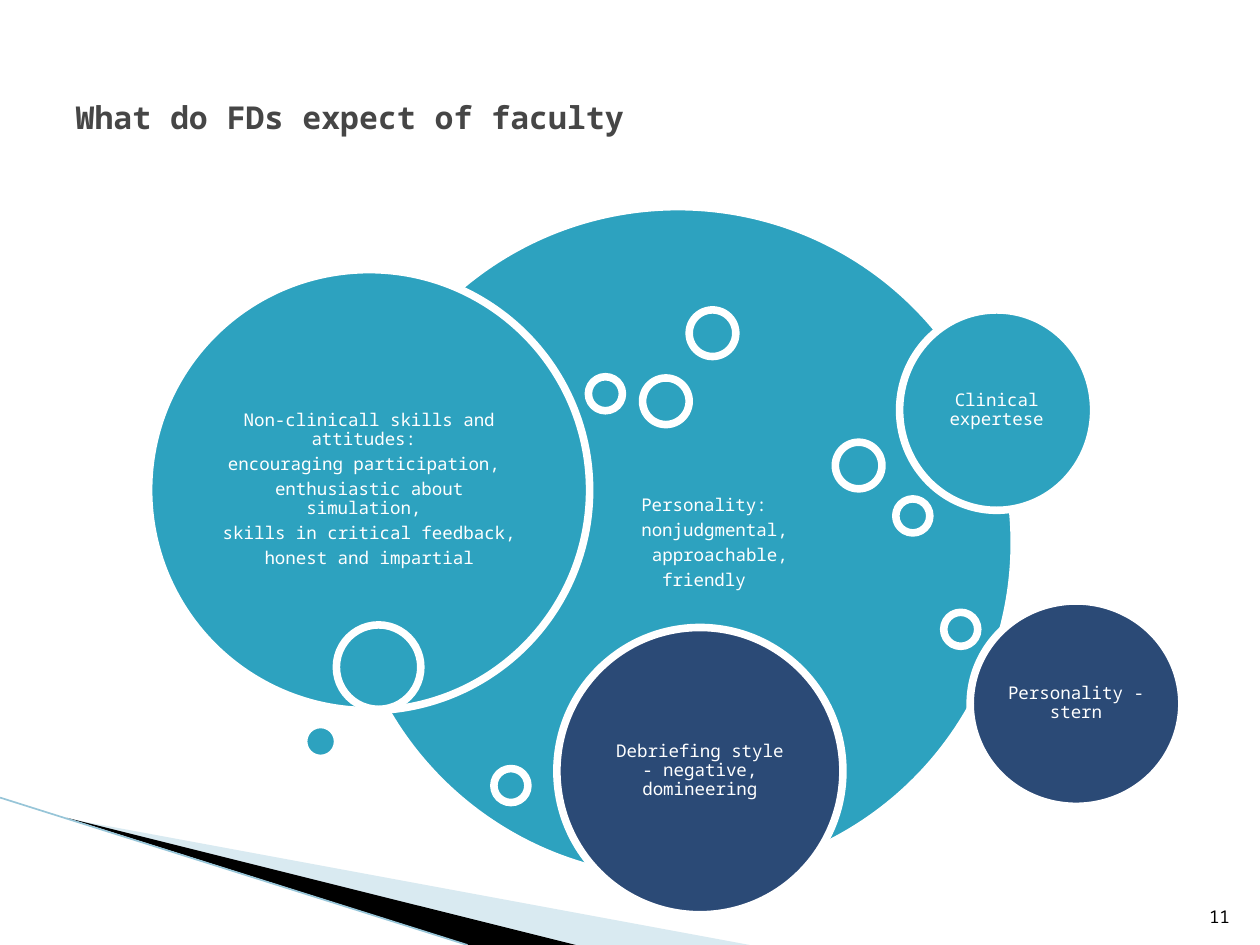
from pptx import Presentation
from pptx.dml.color import RGBColor
from pptx.enum.shapes import MSO_CONNECTOR, MSO_SHAPE
from pptx.enum.text import MSO_ANCHOR, PP_ALIGN
from pptx.oxml.ns import qn
from pptx.util import Inches, Pt
from lxml.etree import SubElement

FONT = "Noto Sans Mono"
TEAL = RGBColor(0x2D, 0xA2, 0xBF)
NAVY = RGBColor(0x2B, 0x4A, 0x76)
PALE = RGBColor(0xA0, 0xCB, 0xDC)
EDGE = RGBColor(0x97, 0xC5, 0xD8)
GREY = RGBColor(0x46, 0x46, 0x46)
WHITE = RGBColor(0xFF, 0xFF, 0xFF)
BLACK = RGBColor(0, 0, 0)
CHARACTER = Pt(6)  # advance of one 10 pt monospaced character

SMALL, MEDIUM, LARGE = 0.27, 0.37, 0.67

deck = Presentation()
deck.slide_width, deck.slide_height = Inches(10), Inches(7.5)
page = deck.slides.add_slide(deck.slide_layouts[5])


def write(frame, lines, size=10, color=WHITE, bold=False, align=PP_ALIGN.CENTER,
          anchor=MSO_ANCHOR.MIDDLE):
    """Fill a text frame and return its paragraphs."""
    frame.word_wrap = True
    frame.vertical_anchor = anchor
    frame.text = "\n".join(lines)
    for para in frame.paragraphs:
        para.alignment = align
        para.font.name, para.font.size = FONT, Pt(size)
        para.font.bold, para.font.color.rgb = bold, color
    return frame.paragraphs


def add_circle(left, top, width, height, fill=TEAL, lines=(), inset=0.04, indents=()):
    """Add a white-edged circle; indents are counted in characters per line."""
    circle = page.shapes.add_shape(MSO_SHAPE.OVAL, Inches(left), Inches(top),
                                   Inches(width), Inches(height))
    circle.shadow.inherit = False
    circle.fill.solid()
    circle.fill.fore_color.rgb = fill
    circle.line.color.rgb = WHITE
    circle.line.width = Pt(4.33)
    if not lines:
        return
    frame = circle.text_frame
    frame.margin_left = frame.margin_right = Inches(inset)
    frame.margin_top = frame.margin_bottom = Inches(0.04)
    paras = write(frame, lines)
    for para in paras:
        para.line_spacing = 0.9
        para.space_after = Pt(3.5)
    for para, count in zip(paras, indents):
        para._p.get_or_add_pPr().set("marL", str(count * CHARACTER))


# Corner wedges
wedges = [
    (PALE, [(0.55, 6.5), (5.95, 7.5), (4.56, 7.5)]),
    (BLACK, [(0.53, 6.49), (4.57, 7.5), (3.72, 7.5)]),
]
for color, points in wedges:
    corners = [(Inches(x), Inches(y)) for x, y in points]
    builder = page.shapes.build_freeform(*corners[0])
    builder.add_line_segments(corners[1:], close=True)
    wedge = builder.convert_to_shape()
    wedge.shadow.inherit = False
    wedge.fill.solid()
    wedge.fill.fore_color.rgb = color
    wedge.line.fill.background()
    if color == PALE:
        SubElement(wedge.fill._xPr.find(".//" + qn("a:srgbClr")), qn("a:alpha"), val="40000")

edge = page.shapes.add_connector(MSO_CONNECTOR.STRAIGHT, Inches(0), Inches(6.33),
                                 Inches(3.71), Inches(7.5))
edge.line.color.rgb = EDGE
edge.line.width = Pt(0.95)
SubElement(edge._element.spPr, qn("a:effectLst"))

# Page number and title
number = page.shapes.add_textbox(Inches(9.46), Inches(7.01), Inches(0.4), Inches(0.4))
write(number.text_frame, ["11"], color=BLACK, align=PP_ALIGN.RIGHT, anchor=MSO_ANCHOR.BOTTOM)

title = page.shapes.title
title.left, title.top = Inches(0.5), Inches(0.3)
title.width, title.height = Inches(9), Inches(1.25)
write(title.text_frame, ["What do FDs expect of faculty"], size=18, color=GREY,
      bold=True, align=PP_ALIGN.LEFT)

# Circles, from back to front
add_circle(2.71, 1.64, 5.34, 5.34,
           lines=["Personality: ", "nonjudgmental, ", "approachable, ", "friendly"],
           indents=[6, 8, 9, 5])
add_circle(1.18, 2.14, 3.5, 3.5,
           lines=["Non-clinicall skills and attitudes: ", "encouraging participation, ",
                  "enthusiastic about simulation, ", "skills in critical feedback, ",
                  "honest and impartial"])
add_circle(7.14, 2.46, 1.54, 1.59, lines=["Clinical expertese"])
add_circle(7.7, 4.77, 1.68, 1.63, NAVY, ["Personality - stern"])
add_circle(4.42, 4.98, 2.27, 2.28, NAVY,
           ["Debriefing style - negative, domineering"], inset=0.08)

bubbles = [
    (5.47, 2.46, MEDIUM), (7.11, 3.96, SMALL), (4.67, 2.99, SMALL),
    (5.1, 3, MEDIUM), (2.67, 4.96, LARGE), (6.63, 3.51, MEDIUM),
    (2.41, 5.75, SMALL), (7.49, 4.86, SMALL), (3.92, 6.1, SMALL),
]
for left, top, size in bubbles:
    add_circle(left, top, size, size)

deck.save("out.pptx")
